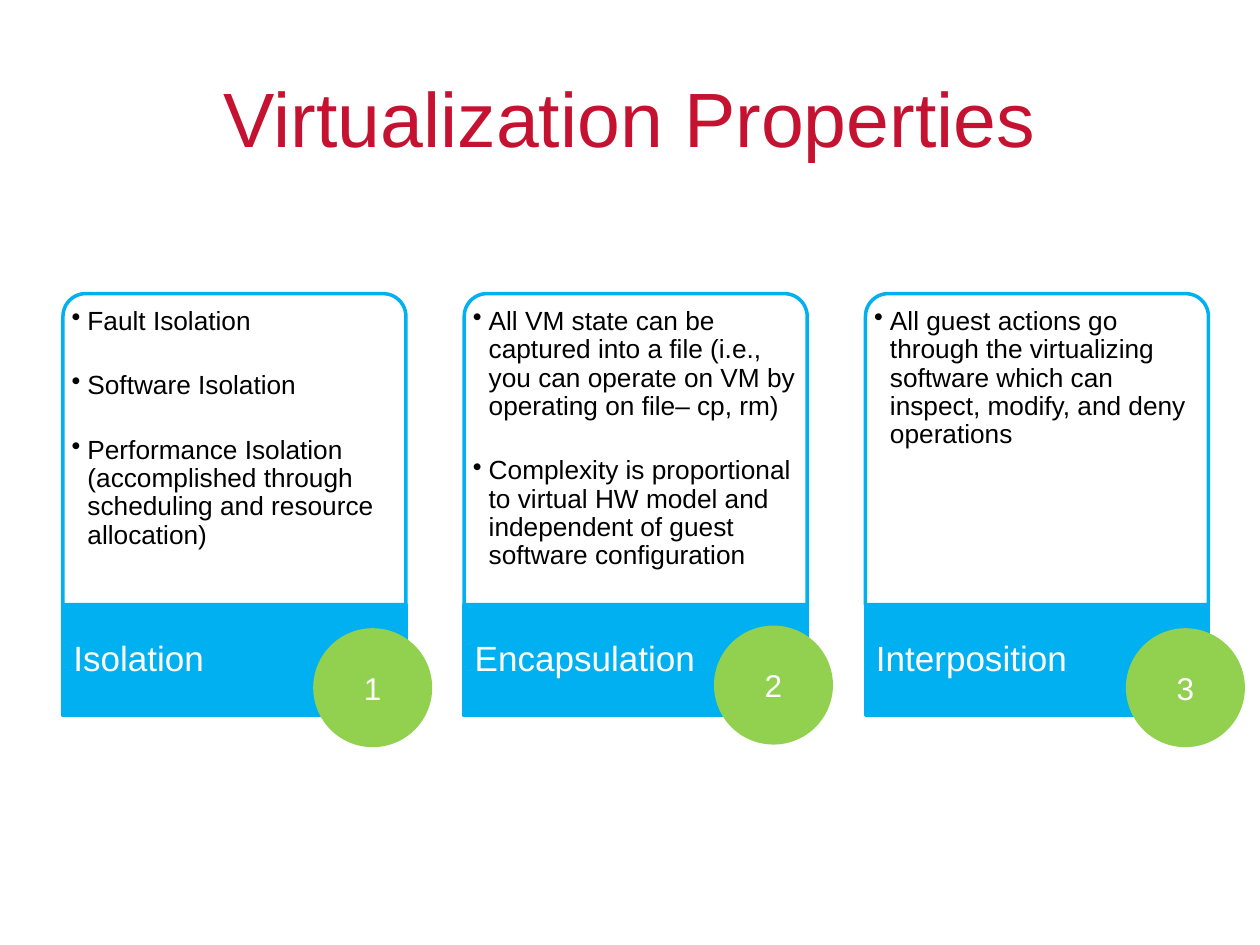
"""Build a slide with three numbered panels on virtualization properties."""
from pptx import Presentation
from pptx.dml.color import RGBColor
from pptx.enum.shapes import MSO_SHAPE
from pptx.enum.text import MSO_ANCHOR, PP_ALIGN
from pptx.oxml.xmlchemy import OxmlElement
from pptx.util import Pt

TITLE = "Virtualization Properties"
PANELS = [
    ("Isolation", [
        "Fault Isolation",
        "Software Isolation",
        "Performance Isolation (accomplished through scheduling and resource allocation)",
    ]),
    ("Encapsulation", [
        "All VM state can be captured into a file (i.e., you can operate on VM by operating on file– cp, rm)",
        "Complexity is proportional to virtual HW model and independent of guest software configuration",
    ]),
    ("Interposition", [
        "All guest actions go through the virtualizing software which can inspect, modify, and deny operations",
    ]),
]
BADGE_PLACES = [(180, 360), (409, 358.5), (644.4, 360)]

RED = RGBColor(0xC4, 0x12, 0x30)
BLUE = RGBColor(0x00, 0xB0, 0xF0)
GREEN = RGBColor(0x92, 0xD0, 0x50)
WHITE = RGBColor(0xFF, 0xFF, 0xFF)
BLACK = RGBColor(0x00, 0x00, 0x00)

LEFT, STEP, WIDTH = 36, 229.3, 196
BODY_TOP, BODY_HEIGHT, BAR_HEIGHT = 167.8, 177.8, 63.4
CORNER_RADIUS = 13
BADGE_SIZE = 66
BULLET_INDENT = 9
BULLET_GAP = 20.6


def add_box(page, kind, place, fill, line, anchor, insets):
    box = page.shapes.add_shape(kind, *map(Pt, place))
    box.shadow.inherit = False
    box.fill.solid()
    box.fill.fore_color.rgb = fill
    box.line.color.rgb = line
    box.line.width = Pt(2)
    frame = box.text_frame
    frame.word_wrap = True
    frame.vertical_anchor = anchor
    frame.margin_left, frame.margin_top, frame.margin_right, frame.margin_bottom = map(Pt, insets)
    return box


def write(para, text, size, color, align=PP_ALIGN.LEFT, spacing=None):
    para.text = text
    para.alignment = align
    para.line_spacing = spacing
    para.font.name = "Arial"
    para.font.size = Pt(size)
    para.font.color.rgb = color


def add_bullet(para):
    properties = para._p.get_or_add_pPr()
    properties.set("marL", str(Pt(BULLET_INDENT)))
    properties.set("indent", str(-Pt(BULLET_INDENT)))
    bullet = OxmlElement("a:buChar")
    bullet.set("char", "•")
    properties.append(bullet)


def add_panel(page, left, name, points):
    body = add_box(page, MSO_SHAPE.ROUND_2_SAME_RECTANGLE, (left, BODY_TOP, WIDTH, BODY_HEIGHT),
                   WHITE, BLUE, MSO_ANCHOR.TOP, (1.2, 4.2, 1.2, 1.4))
    body.adjustments[0] = CORNER_RADIUS / BODY_HEIGHT
    frame = body.text_frame
    for index, point in enumerate(points):
        para = frame.add_paragraph() if index else frame.paragraphs[0]
        add_bullet(para)
        write(para, point, 15, BLACK, spacing=0.9)
        if index:
            para.space_before = Pt(BULLET_GAP)
    bar = add_box(page, MSO_SHAPE.RECTANGLE, (left, BODY_TOP + BODY_HEIGHT, WIDTH, BAR_HEIGHT),
                  BLUE, BLUE, MSO_ANCHOR.MIDDLE, (6, 0, 59.8, 0))
    write(bar.text_frame.paragraphs[0], name, 20, WHITE, spacing=0.9)


def main():
    deck = Presentation()
    deck.slide_width, deck.slide_height = Pt(720), Pt(540)
    page = deck.slides.add_slide(deck.slide_layouts[5])

    title = page.shapes.title
    title.left, title.top, title.width, title.height = map(Pt, (36, 21.6, 648, 90))
    title.text_frame.vertical_anchor = MSO_ANCHOR.MIDDLE
    write(title.text_frame.paragraphs[0], TITLE, 44, RED, PP_ALIGN.CENTER)

    for index, (name, points) in enumerate(PANELS):
        add_panel(page, LEFT + index * STEP, name, points)

    for number, (left, top) in enumerate(BADGE_PLACES, 1):
        badge = add_box(page, MSO_SHAPE.OVAL, (left, top, BADGE_SIZE, BADGE_SIZE),
                        GREEN, GREEN, MSO_ANCHOR.MIDDLE, (7.2, 3.6, 7.2, 3.6))
        write(badge.text_frame.paragraphs[0], str(number), 18, WHITE, PP_ALIGN.CENTER)

    deck.save("out.pptx")


if __name__ == "__main__":
    main()
